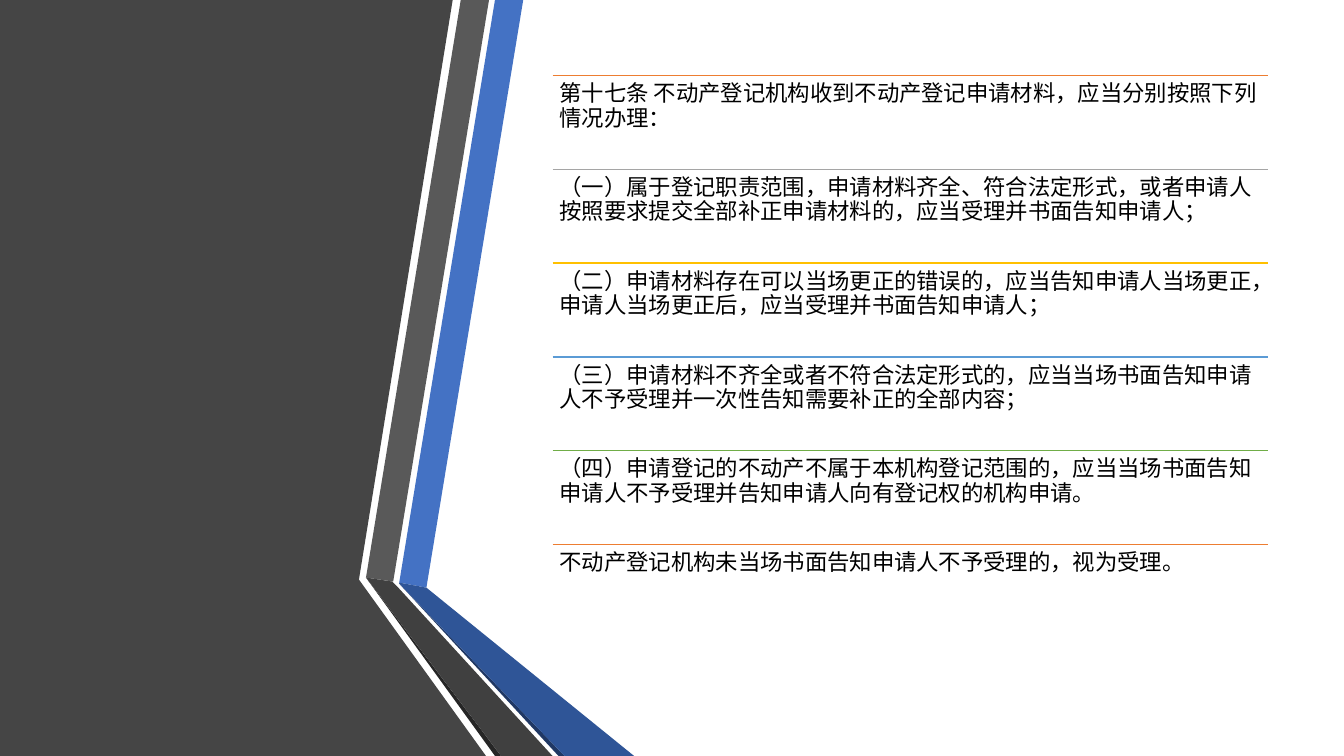
from dataclasses import dataclass

from lxml.etree import SubElement
from pptx import Presentation
from pptx.dml.color import RGBColor
from pptx.enum.shapes import MSO_CONNECTOR
from pptx.enum.text import MSO_ANCHOR, PP_ALIGN
from pptx.oxml.ns import qn
from pptx.util import Inches, Pt


@dataclass(frozen=True)
class Theme:
    font: str = "Noto Sans CJK SC"
    size: float = 16
    rule_width: float = 1
    text: str = "000000"
    panel: str = "454545"
    blue: str = "4472C4"
    blue_fold: str = "2F5597"
    blue_edge: str = "203864"
    gray: str = "595959"
    gray_fold: str = "404040"
    gray_edge: str = "262626"
    rules: tuple = ("ED7D31", "A5A5A5", "FFC000", "5B9BD5", "70AD47")


THEME = Theme()

RIBBONS = [
    (THEME.panel, [(0, 0), (4.49, 0), (3.56, 5.75), (4.82, 7.5), (0, 7.5)]),
    (THEME.blue, [(3.96, 5.78), (4.23, 5.83), (5.19, 0), (4.91, 0)]),
    (THEME.gray, [(4.85, 0), (4.57, 0), (3.63, 5.73), (3.9, 5.77)]),
    (THEME.gray_edge, [(3.63, 5.73), (4.91, 7.5), (4.97, 7.5)]),
    (THEME.blue_edge, [(3.96, 5.79), (5.54, 7.5), (5.6, 7.5)]),
    (THEME.blue_fold, [(3.96, 5.79), (5.6, 7.5), (6.29, 7.5), (4.23, 5.83), (3.96, 5.78)]),
    (THEME.gray_fold, [(5.48, 7.5), (3.95, 5.83), (3.89, 5.77), (3.63, 5.73), (4.97, 7.5)]),
]

CLAUSES = [
    "第十七条 不动产登记机构收到不动产登记申请材料，应当分别按照下列情况办理：",
    "（一）属于登记职责范围，申请材料齐全、符合法定形式，或者申请人按照要求提交全部补正申请材料的，应当受理并书面告知申请人；",
    "（二）申请材料存在可以当场更正的错误的，应当告知申请人当场更正，申请人当场更正后，应当受理并书面告知申请人；",
    "（三）申请材料不齐全或者不符合法定形式的，应当当场书面告知申请人不予受理并一次性告知需要补正的全部内容；",
    "（四）申请登记的不动产不属于本机构登记范围的，应当当场书面告知申请人不予受理并告知申请人向有登记权的机构申请。",
    "不动产登记机构未当场书面告知申请人不予受理的，视为受理。",
]


def set_format(target, values):
    for name, value in values.items():
        setattr(target, name, value)


def add_ribbons(s, left, top):
    for color, outline in RIBBONS:
        points = [(Inches(left + x), Inches(top + y)) for x, y in outline]
        builder = s.shapes.build_freeform(*points[0], scale=1.0)
        builder.add_line_segments(points[1:], close=True)
        sp = builder.convert_to_shape()
        sp.shadow.inherit = False
        sp.fill.solid()
        sp.fill.fore_color.rgb = RGBColor.from_string(color)
        sp.line.fill.background()


def add_rule(s, left, top, width, color):
    x, y = Inches(left), Inches(top)
    line = s.shapes.add_connector(MSO_CONNECTOR.STRAIGHT, x, y, x + Inches(width), y)
    line.line.color.rgb = RGBColor.from_string(color)
    line.line.width = Pt(THEME.rule_width)
    SubElement(line._element.spPr, qn("a:effectLst"))


def add_clause(s, left, top, width, height, text):
    sp = s.shapes.add_textbox(Inches(left), Inches(top), Inches(width), Inches(height))
    tf = sp.text_frame
    margins = ("margin_left", "margin_top", "margin_right", "margin_bottom")
    set_format(tf, {name: Inches(0.07) for name in margins})
    set_format(tf, {"word_wrap": True, "vertical_anchor": MSO_ANCHOR.TOP})
    p = tf.paragraphs[0]
    set_format(p, {"line_spacing": 0.9, "space_after": Pt(5.6), "alignment": PP_ALIGN.LEFT})
    r = p.add_run()
    r.text = text
    set_format(r.font, {"name": THEME.font, "size": Pt(THEME.size)})
    r.font.color.rgb = RGBColor.from_string(THEME.text)
    SubElement(r.font._element, qn("a:ea"), typeface=THEME.font)


def add_clause_list(s, left, top, width, height):
    row = height / len(CLAUSES)
    for i, text in enumerate(CLAUSES):
        y = top + i * row
        add_rule(s, left, y, width, THEME.rules[i % len(THEME.rules)])
        add_clause(s, left, y, width, row, text)


def main():
    prs = Presentation()
    set_format(prs, {"slide_width": Inches(13.33), "slide_height": Inches(7.5)})
    s = prs.slides.add_slide(prs.slide_layouts[6])
    add_ribbons(s, 0, 0)
    add_clause_list(s, 5.48, 0.75, 7.1, 5.58)
    prs.save("out.pptx")


if __name__ == "__main__":
    main()
